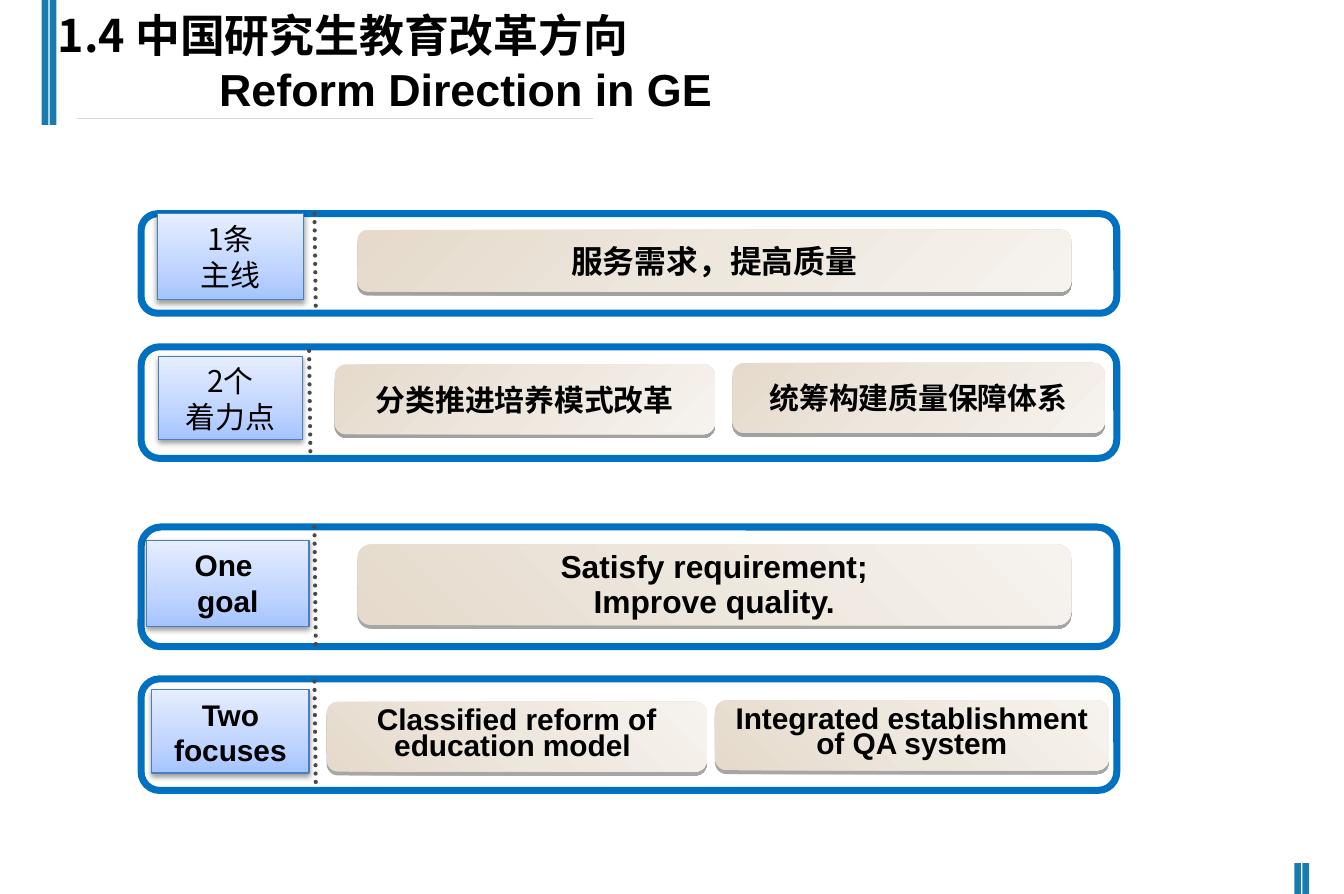
from pptx import Presentation
from pptx.dml.color import RGBColor
from pptx.enum.dml import MSO_LINE
from pptx.enum.shapes import MSO_CONNECTOR, MSO_SHAPE
from pptx.enum.text import MSO_ANCHOR, PP_ALIGN
from pptx.oxml import parse_xml
from pptx.oxml.ns import nsdecls, qn
from pptx.util import Inches, Pt

COLS, ROWS = 100, 66.5
CELL = Inches(0.1)

BLACK = RGBColor(0x00, 0x00, 0x00)
WHITE = RGBColor(0xFF, 0xFF, 0xFF)
STRIPE = RGBColor(0x1A, 0x7B, 0xAE)
RULE = RGBColor(0xD9, 0xD9, 0xD9)
FRAME = RGBColor(0x00, 0x70, 0xC0)
DOTS = RGBColor(0x51, 0x48, 0x43)
LABEL_LINE = RGBColor(0x4B, 0x7E, 0xBC)
SAND = [(0, RGBColor(0xE5, 0xDA, 0xCB)), (50, RGBColor(0xEE, 0xE7, 0xDE)),
        (100, RGBColor(0xF6, 0xF3, 0xEE))]
SKY = [(0, RGBColor(0xA4, 0xC4, 0xFF)), (35, RGBColor(0xBF, 0xD4, 0xFF)),
       (100, RGBColor(0xE6, 0xEE, 0xFF))]

CJK = "Noto Sans CJK SC"
CHINESE = {"label": {"name": CJK, "bold": False}, "box": {"name": "Lato", "bold": True},
           "angle": 45, "alpha": 36}
ENGLISH = {"label": {"name": "Arial", "bold": True}, "box": {"name": "Arial", "bold": True},
           "angle": 315, "alpha": 34}

# Grid lengths. Frame: top, height. Divider: x, top, bottom.
# Label: place, lines. Boxes: place, lines, text size, paragraph format.
BANDS = [
    (CHINESE, (15.9, 7.4), (23.4, 15.9, 23.3), ((11.7, 15.9, 10.9, 6.4), ["1条", "主线"]),
     [((26.6, 17.1, 53.1, 4.6), ["服务需求，提高质量"], 17, {})]),
    (CHINESE, (25.8, 8.3), (23, 26.1, 33.9), ((11.8, 26.5, 10.7, 6.2), ["2个", "着力点"]),
     [((24.9, 27.1, 28.3, 5.2), ["分类推进培养模式改革"], 16, {}),
      ((54.5, 27, 27.7, 5.2), ["统筹构建质量保障体系"], 16, {})]),
    (ENGLISH, (39.2, 8.9), (23.4, 39.2, 48.1), ((10.9, 40.2, 12.1, 6.4), ["One ", "goal"]),
     [((26.6, 40.5, 53.1, 6), ["Satisfy requirement;", "Improve quality."], 17,
       {"line_spacing": Pt(19)})]),
    (ENGLISH, (50.5, 8.3), (23.4, 50.7, 58.6), ((11.3, 51.3, 11.7, 6.2), ["Two focuses"]),
     [((24.3, 52.2, 28.3, 5.2), ["Classified reform of education model "], 16,
       {"line_spacing": Pt(13.7), "space_before": Pt(4.6)}),
      ((53.2, 52.1, 29.3, 5.2), ["Integrated establishment of QA system"], 16,
       {"line_spacing": Pt(13.7)})]),
]


def grid(*cells):
    return [round(c * CELL) for c in cells]


def set_all(obj, values):
    for name, value in values.items():
        setattr(obj, name, value)


def set_margins(tf, side, top):
    set_all(tf, {"margin_left": Inches(side), "margin_right": Inches(side),
                 "margin_top": Inches(top), "margin_bottom": Inches(top)})


def add_run(p, text, name, size, bold):
    r = p.add_run()
    r.text = text
    set_all(r.font, {"name": name, "size": Pt(size), "bold": bold})
    r.font.color.rgb = BLACK
    r.font._element.find(qn("a:latin")).addnext(
        parse_xml(f'<a:ea {nsdecls("a")} typeface="{CJK}"/>'))


def add_panel(slide, kind, place, fill=None, line=None, width=0):
    sp = slide.shapes.add_shape(kind, *grid(*place))
    sp.shadow.inherit = False
    if fill is not None:
        sp.fill.solid()
        sp.fill.fore_color.rgb = fill
    if line is None:
        sp.line.fill.background()
    else:
        sp.line.color.rgb = line
        sp.line.width = Pt(width)
    return sp


def shade(sp, stops, angle):
    sp.fill.gradient()
    grad = sp._element.spPr.find(qn("a:gradFill"))
    marks = "".join(f'<a:gs pos="{pos * 1000}"><a:srgbClr val="{color}"/></a:gs>'
                    for pos, color in stops)
    new = parse_xml(f'<a:gradFill {nsdecls("a")} rotWithShape="1"><a:gsLst>{marks}</a:gsLst>'
                    f'<a:lin ang="{angle * 60000}" scaled="0"/></a:gradFill>')
    grad.getparent().replace(grad, new)


def drop_shadow(sp, alpha, blur, dist):
    sp._element.spPr.find(qn("a:effectLst")).append(parse_xml(
        f'<a:outerShdw {nsdecls("a")} blurRad="{Pt(blur)}" dist="{Pt(dist)}" dir="5400000" '
        f'rotWithShape="0"><a:srgbClr val="{BLACK}"><a:alpha val="{alpha * 1000}"/>'
        '</a:srgbClr></a:outerShdw>'))


def write(sp, lines, size, font, anchor, margins, spacing):
    tf = sp.text_frame
    set_all(tf, {"word_wrap": True, "vertical_anchor": anchor})
    set_margins(tf, *margins)
    for i, text in enumerate(lines):
        p = tf.add_paragraph() if i else tf.paragraphs[0]
        set_all(p, {"alignment": PP_ALIGN.CENTER, **spacing})
        add_run(p, text, size=size, **font)


def add_line(slide, start, end, color, width, dotted=False):
    line = slide.shapes.add_connector(MSO_CONNECTOR.STRAIGHT, *grid(*start, *end))
    line.line.color.rgb = color
    line.line.width = Pt(width)
    if dotted:
        line.line.dash_style = MSO_LINE.ROUND_DOT
        line.line._ln.set("cap", "rnd")
    line._element.spPr.append(parse_xml(f'<a:effectLst {nsdecls("a")}/>'))


def add_stripes(slide):
    """Pairs of bars at the top left and bottom right corners."""
    for left, top, height in ((3.1, 0, 9.3), (96.3, 64.2, ROWS - 64.2)):
        for x in (left, left + 0.6):
            add_panel(slide, MSO_SHAPE.RECTANGLE, (x, top, 0.5, height), STRIPE)


def set_title(slide):
    title = slide.shapes.title
    left, top, width, height = grid(3.5, 0.2, 74.9, 8.9)
    set_all(title, {"left": left, "top": top, "width": width, "height": height})
    tf = title.text_frame
    set_all(tf, {"word_wrap": True, "vertical_anchor": MSO_ANCHOR.TOP})
    set_margins(tf, 0.08, 0.04)
    chinese, english = tf.paragraphs[0], tf.add_paragraph()
    for p in (chinese, english):
        p.alignment = PP_ALIGN.LEFT
    add_run(chinese, "1.4 中国研究生教育改革方向", CJK, 24, True)
    add_run(english, "Reform Direction in GE", "Arial", 24, True)
    english._p.get_or_add_pPr().set("marL", str(Inches(1.2)))


def add_band(slide, style, frame, divider, label, boxes):
    top, height = frame
    add_panel(slide, MSO_SHAPE.ROUNDED_RECTANGLE, (10.5, top, 72.6, height), WHITE, FRAME, 3.78)
    for place, lines, size, spacing in boxes:
        sp = add_panel(slide, MSO_SHAPE.ROUNDED_RECTANGLE, place)
        shade(sp, SAND, style["angle"])
        drop_shadow(sp, style["alpha"], 0, 2)
        write(sp, lines, size, style["box"], MSO_ANCHOR.MIDDLE, (0.06, 0.03), spacing)
    x, start, end = divider
    add_line(slide, (x, start), (x + 0.1, end), DOTS, 2.25, dotted=True)
    place, lines = label
    sp = add_panel(slide, MSO_SHAPE.RECTANGLE, place, line=LABEL_LINE, width=0.75)
    shade(sp, SKY, 270)
    drop_shadow(sp, 38, 3.1, 1.6)
    write(sp, lines, 16, style["label"], MSO_ANCHOR.TOP, (0.08, 0.05), {})


def main():
    prs = Presentation()
    prs.slide_width, prs.slide_height = grid(COLS, ROWS)
    slide = prs.slides.add_slide(prs.slide_layouts[5])
    add_stripes(slide)
    add_line(slide, (5.7, 8.8), (44.1, 8.8), RULE, 0.75)
    set_title(slide)
    for band in BANDS:
        add_band(slide, *band)
    prs.save("out.pptx")


if __name__ == "__main__":
    main()
